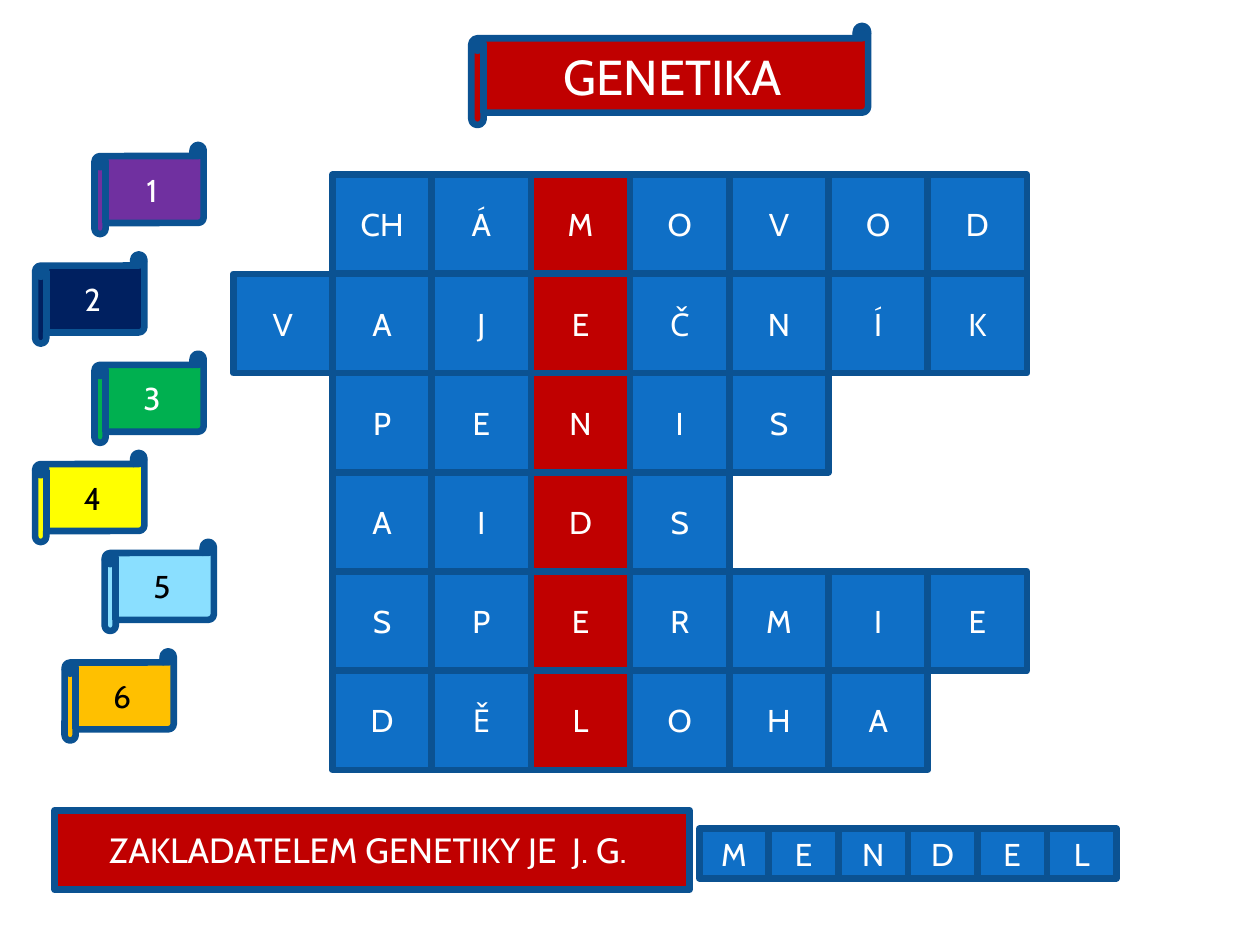
from pptx import Presentation
from pptx.dml.color import RGBColor
from pptx.enum.shapes import MSO_SHAPE
from pptx.enum.text import MSO_ANCHOR, PP_ALIGN
from pptx.util import Pt

RECT = MSO_SHAPE.RECTANGLE
SCROLL = MSO_SHAPE.HORIZONTAL_SCROLL
CENTER = PP_ALIGN.CENTER
MIDDLE = MSO_ANCHOR.MIDDLE

BLUE, RED, OUTLINE = "0F6FC6", "C00000", "0B5292"
WHITE, BLACK = "FFFFFF", "000000"

CELL = 56.7
GRID_LEFT, GRID_TOP = 133.3, 99.8
KEY_COLUMN = 3
ANSWERS = [
    (1, ["CH", "Á", "M", "O", "V", "O", "D"]),
    (0, "VAJEČNÍK"),
    (1, "PENIS"),
    (1, "AIDS"),
    (1, "SPERMIE"),
    (1, "DĚLOHA"),
]

SOLUTION_LEFT, SOLUTION_TOP = 399.6, 473.6
SOLUTION_W, SOLUTION_H = 39.74, 28.3

CLUES = [
    (54, 82.8, "7030A0", WHITE),
    (20.1, 145.4, "002060", WHITE),
    (54, 202.1, "00B050", WHITE),
    (20.1, 258.8, "FFFF00", BLACK),
    (59.8, 309.6, "8ADFFF", BLACK),
    (36.9, 372.2, "FFC000", BLACK),
]


def rgb(value):
    return RGBColor.from_string(value)


def write(tf, text, size=18, color=WHITE, font="Cabin"):
    tf.word_wrap = True
    tf.vertical_anchor = MIDDLE
    p = tf.paragraphs[0]
    p.alignment = CENTER
    r = p.add_run()
    r.text = text
    r.font.name = font
    r.font.size = Pt(size)
    r.font.color.rgb = rgb(color)


class Board:
    line_color = OUTLINE
    line_width = 3.78

    def __init__(self, s):
        self.s = s

    def shape(self, kind, x, y, w, h, fill, text, **fmt):
        sp = self.s.shapes.add_shape(kind, Pt(x), Pt(y), Pt(w), Pt(h))
        sp.shadow.inherit = False
        sp.fill.solid()
        sp.fill.fore_color.rgb = rgb(fill)
        sp.line.color.rgb = rgb(self.line_color)
        sp.line.width = Pt(self.line_width)
        write(sp.text_frame, text, **fmt)

    def box(self, x, y, w, h, text, fill=BLUE, **fmt):
        self.shape(RECT, x, y, w, h, fill, text, **fmt)

    def scroll(self, x, y, w, h, text, fill, **fmt):
        self.shape(SCROLL, x, y, w, h, fill, text, **fmt)


def main():
    prs = Presentation()
    prs.slide_width, prs.slide_height = Pt(720), Pt(540)
    board = Board(prs.slides.add_slide(prs.slide_layouts[6]))

    for row, (start, letters) in enumerate(ANSWERS):
        for col, letter in enumerate(letters, start):
            board.box(GRID_LEFT + col * CELL, GRID_TOP + row * CELL, CELL, CELL,
                      letter, RED if col == KEY_COLUMN else BLUE)

    board.box(31.2, 463, 362.8, 45.4, "ZAKLADATELEM GENETIKY JE  J. G. ", RED, size=20)
    for i, letter in enumerate("MENDEL"):
        board.box(SOLUTION_LEFT + i * SOLUTION_W, SOLUTION_TOP,
                  SOLUTION_W, SOLUTION_H, letter)

    for number, (x, y, fill, color) in enumerate(CLUES, 1):
        board.scroll(x, y, 62.4, 51, str(number), fill, color=color)
    board.scroll(269.3, 14.8, 226.8, CELL, "GENETIKA", RED, size=28)

    prs.save("out.pptx")


if __name__ == "__main__":
    main()
